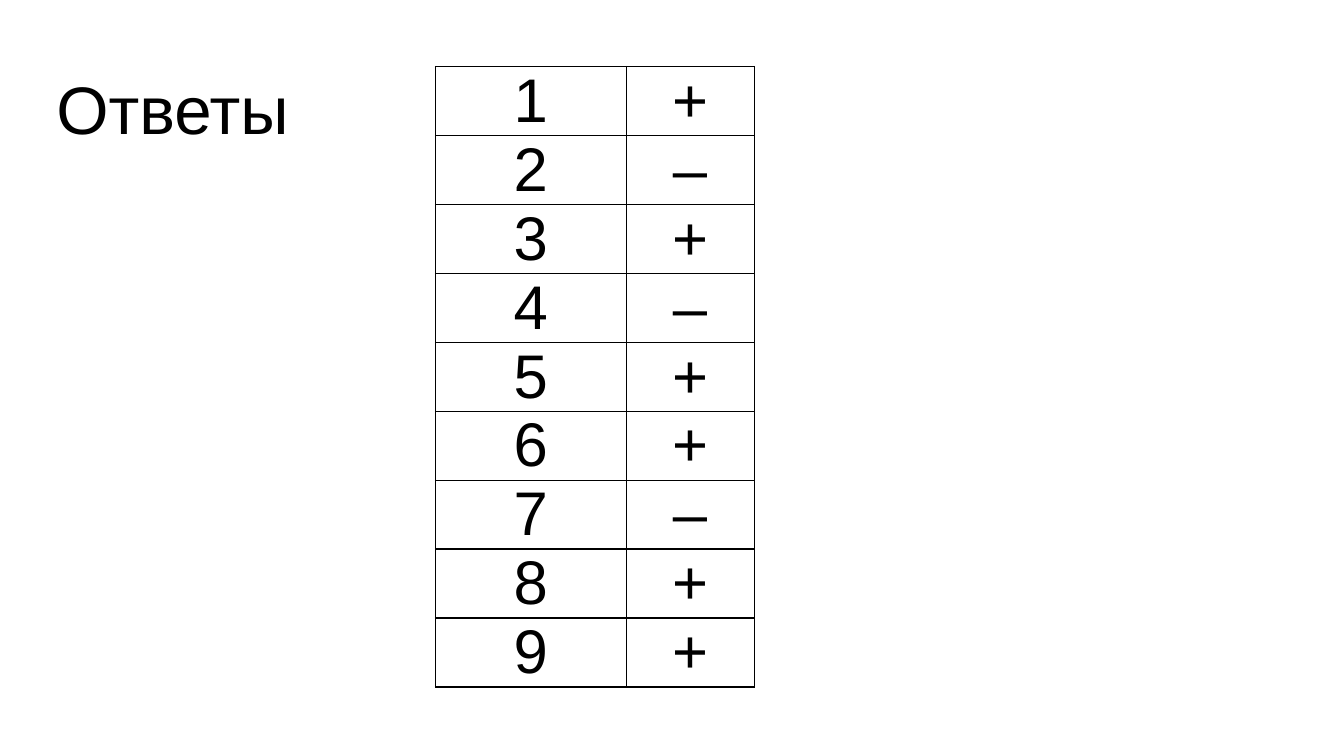
from dataclasses import dataclass

import pptx
import pptx.dml.color
import pptx.enum.text
import pptx.oxml.ns
import pptx.util
from lxml import etree

Inches = pptx.util.Inches
ANCHOR = pptx.enum.text.MSO_ANCHOR
ALIGN = pptx.enum.text.PP_ALIGN
BLACK = "000000"


@dataclass
class Answer:
    number: int
    mark: str


def rgb(color: str) -> pptx.dml.color.RGBColor:
    return pptx.dml.color.RGBColor.from_string(color)


def write(tf, text: str, size: float, align=ALIGN.LEFT, color: str = BLACK) -> None:
    p = tf.paragraphs[0]
    p.alignment = align
    r = p.add_run()
    r.text = text
    r.font.name = "Arial"
    r.font.size = pptx.util.Pt(size)
    r.font.color.rgb = rgb(color)


def add_borders(cell, width: float = 1, color: str = BLACK) -> None:
    qn = pptx.oxml.ns.qn
    tc_pr = cell._tc.get_or_add_tcPr()
    for i, side in enumerate(("a:lnL", "a:lnR", "a:lnT", "a:lnB")):
        ln = etree.Element(qn(side), w=str(pptx.util.Pt(width)))
        fill = etree.SubElement(ln, qn("a:solidFill"))
        etree.SubElement(fill, qn("a:srgbClr"), val=color)
        tc_pr.insert(i, ln)


def fill_cell(cell, text: str) -> None:
    cell.fill.background()
    cell.margin_left = cell.margin_right = Inches(0.07)
    cell.margin_top = cell.margin_bottom = 0
    write(cell.text_frame, text, size=44, align=ALIGN.CENTER)
    add_borders(cell)


def add_answers(s, answers: list[Answer]) -> None:
    widths, row_height = (1.89, 1.27), 0.68
    frame = s.shapes.add_table(len(answers), len(widths), Inches(4.32), Inches(0.66),
                               Inches(sum(widths)), Inches(row_height * len(answers)))
    table = frame.table
    table.first_row = table.horz_banding = False
    for column, width in zip(table.columns, widths):
        column.width = Inches(width)
    for i, answer in enumerate(answers):
        table.rows[i].height = Inches(row_height)
        fill_cell(table.cell(i, 0), str(answer.number))
        fill_cell(table.cell(i, 1), answer.mark)


def main() -> None:
    prs = pptx.Presentation()
    prs.slide_width, prs.slide_height = Inches(13.33), Inches(7.5)
    s = prs.slides.add_slide(prs.slide_layouts[5])

    # Answer table
    add_answers(s, [Answer(i, mark) for i, mark in enumerate("+–+–++–++", start=1)])

    # Title
    title = s.shapes.title
    title.left, title.top = Inches(0.46), Inches(0.61)
    title.width, title.height = Inches(3.86), Inches(0.91)
    tf = title.text_frame
    tf.word_wrap = True
    tf.auto_size = pptx.enum.text.MSO_AUTO_SIZE.NONE
    tf.vertical_anchor = ANCHOR.BOTTOM
    write(tf, "Ответы", size=48)

    prs.save("out.pptx")


if __name__ == "__main__":
    main()
